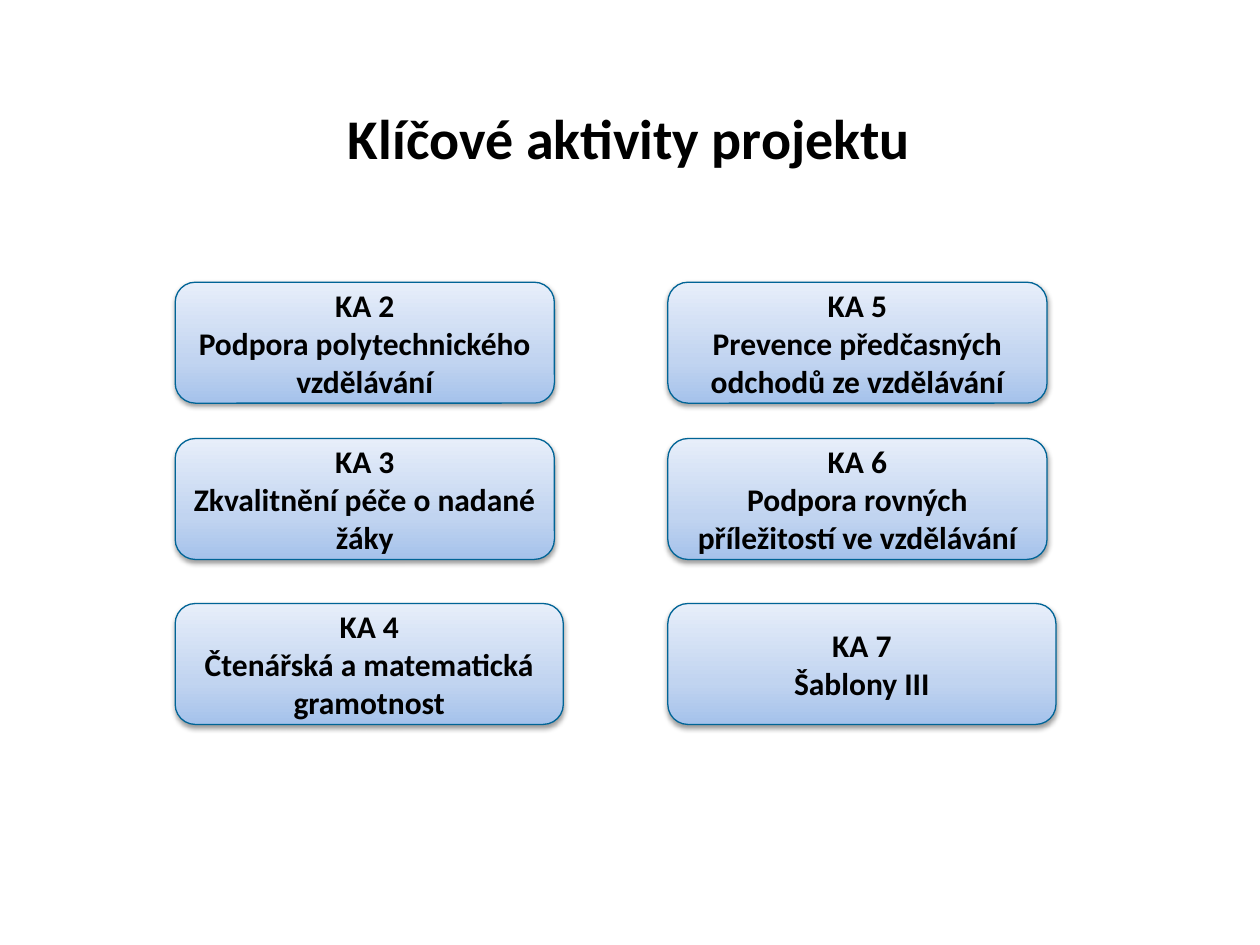
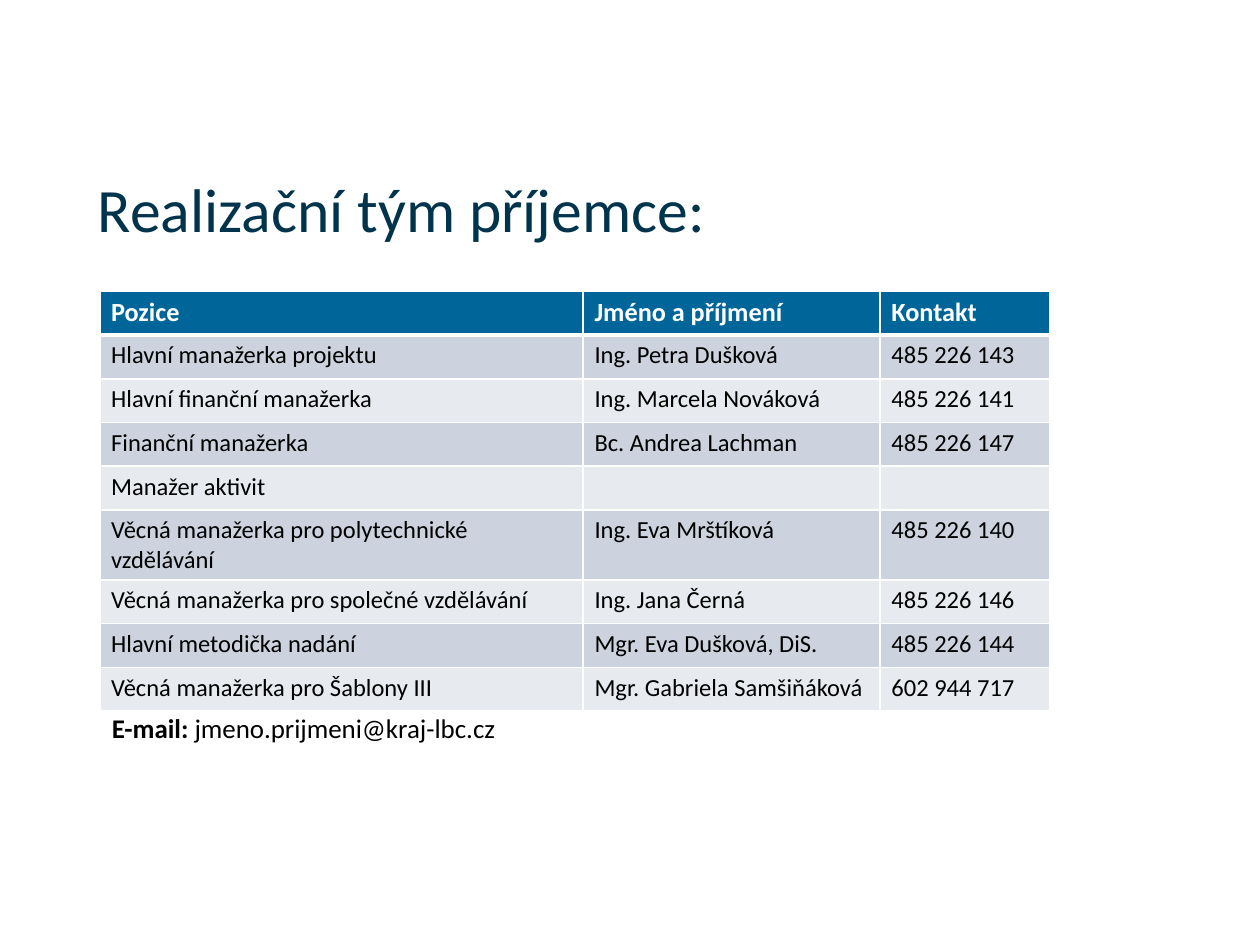
from lxml.etree import SubElement
from pptx import Presentation
from pptx.dml.color import RGBColor
from pptx.enum.shapes import MSO_SHAPE
from pptx.enum.text import MSO_ANCHOR, PP_ALIGN
from pptx.oxml.ns import qn
from pptx.util import Pt

FONT = "Calibri"
BLACK = RGBColor(0x00, 0x00, 0x00)
WHITE = RGBColor(0xFF, 0xFF, 0xFF)
NAVY = RGBColor(0x00, 0x33, 0x4C)
HEADER_BLUE = RGBColor(0x00, 0x66, 0x99)
OUTLINE_BLUE = RGBColor(0x00, 0x64, 0x96)
BAND_DARK = RGBColor(0xCC, 0xD3, 0xDE)
BAND_LIGHT = RGBColor(0xE7, 0xEA, 0xEF)
CARD_STOPS = (
    (0, RGBColor(0xA5, 0xC2, 0xEB)),
    (35, RGBColor(0xC1, 0xD4, 0xF0)),
    (100, RGBColor(0xE7, 0xEE, 0xFA)),
)

CARD_LEFTS = (100.1, 381.6)
CARD_ROWS = ((161.3, 216.7), (250.6, 216.7), (344.9, 221.8))
CARD_HEIGHT = 69.1
ACTIVITIES = (
    (("KA 2", "Podpora polytechnického vzdělávání"),
     ("KA 5", "Prevence předčasných odchodů ze vzdělávání")),
    (("KA 3", "Zkvalitnění péče o nadané žáky"),
     ("KA 6", "Podpora rovných příležitostí ve vzdělávání")),
    (("KA 4", "Čtenářská a matematická gramotnost"),
     ("KA 7", "Šablony III")),
)

TEAM_COLUMNS = (276.25, 169.7, 96.85)
TEAM_ROW_HEIGHT = 25
TEAM = (
    ("Pozice", "Jméno a příjmení", "Kontakt"),
    ("Hlavní manažerka projektu", "Ing. Petra Dušková", "485 226 143"),
    ("Hlavní finanční manažerka", "Ing. Marcela Nováková", "485 226 141"),
    ("Finanční manažerka", "Bc. Andrea Lachman", "485 226 147"),
    ("Manažer aktivit", "", ""),
    ("Věcná manažerka pro polytechnické vzdělávání", "Ing. Eva Mrštíková", "485 226 140"),
    ("Věcná manažerka pro společné vzdělávání", "Ing. Jana Černá", "485 226 146"),
    ("Hlavní metodička nadání", "Mgr. Eva Dušková, DiS.", "485 226 144"),
    ("Věcná manažerka pro Šablony III", "Mgr. Gabriela Samšiňáková", "602 944 717"),
)


def set_font(p, size, color, bold=None):
    """Set the font of a whole paragraph."""
    p.font.name = FONT
    p.font.size = Pt(size)
    p.font.color.rgb = color
    p.font.bold = bold


def add_solid(parent, color):
    """Append a solid fill element."""
    fill = SubElement(parent, qn("a:solidFill"))
    return SubElement(fill, qn("a:srgbClr"), val=str(color))


def add_text(slide, left, top, width, height, runs, size, color):
    """Add a one-paragraph text box from (text, bold) runs."""
    box = slide.shapes.add_textbox(Pt(left), Pt(top), Pt(width), Pt(height))
    tf = box.text_frame
    tf.word_wrap = True
    p = tf.paragraphs[0]
    set_font(p, size, color)
    for text, bold in runs:
        r = p.add_run()
        r.text = text
        r.font.bold = bold
    return tf


def fill_card(s):
    """Give a card its upward gradient."""
    s.fill.gradient()
    s.fill.gradient_angle = 90
    stops = s._element.spPr.find(qn("a:gradFill")).find(qn("a:gsLst"))
    for stop in list(stops):
        stops.remove(stop)
    for percent, color in CARD_STOPS:
        stop = SubElement(stops, qn("a:gs"), pos=str(percent * 1000))
        SubElement(stop, qn("a:srgbClr"), val=str(color))


def add_shadow(s):
    """Give a card a soft shadow below it."""
    s.shadow.inherit = False
    effects = s._element.spPr.find(qn("a:effectLst"))
    shadow = SubElement(effects, qn("a:outerShdw"), blurRad=str(Pt(3.1)),
                        dist=str(Pt(1.6)), dir="5400000", rotWithShape="0")
    color = SubElement(shadow, qn("a:srgbClr"), val=str(BLACK))
    SubElement(color, qn("a:alpha"), val="38000")


def add_card(slide, left, top, width, lines):
    """Add a rounded card with centred bold lines."""
    s = slide.shapes.add_shape(MSO_SHAPE.ROUNDED_RECTANGLE, Pt(left), Pt(top),
                               Pt(width), Pt(CARD_HEIGHT))
    fill_card(s)
    s.line.color.rgb = OUTLINE_BLUE
    s.line.width = Pt(0.75)
    add_shadow(s)
    tf = s.text_frame
    tf.word_wrap = True
    tf.vertical_anchor = MSO_ANCHOR.MIDDLE
    for i, text in enumerate(lines):
        p = tf.add_paragraph() if i else tf.paragraphs[0]
        p.text = text
        p.alignment = PP_ALIGN.CENTER
        set_font(p, 18, BLACK, True)


def format_cell(cell, text, row):
    """Write one team cell with its borders, fill and font."""
    header = row == 0
    widths = {"L": 1, "R": 1, "T": 3 if row == 1 else 1, "B": 3 if header else 1}
    tc_pr = cell._tc.get_or_add_tcPr()
    for side, width in widths.items():
        add_solid(SubElement(tc_pr, qn("a:ln" + side), w=str(Pt(width))), WHITE)
    cell.fill.solid()
    cell.fill.fore_color.rgb = HEADER_BLUE if header else BAND_DARK if row % 2 else BAND_LIGHT
    cell.margin_left = cell.margin_right = Pt(6.5)
    cell.margin_top = cell.margin_bottom = Pt(3.2)
    p = cell.text_frame.paragraphs[0]
    size = 15 if header else 14
    if text:
        p.text = text
    else:
        p._p.get_or_add_endParaRPr().set("sz", str(size * 100))
    set_font(p, size, WHITE if header else BLACK, header)


def add_team_table(slide, left, top):
    """Add the banded table of the team."""
    table = slide.shapes.add_table(len(TEAM), len(TEAM_COLUMNS), Pt(left), Pt(top),
                                   Pt(sum(TEAM_COLUMNS)),
                                   Pt(TEAM_ROW_HEIGHT * len(TEAM))).table
    for column, width in zip(table.columns, TEAM_COLUMNS):
        column.width = Pt(width)
    for i, member in enumerate(TEAM):
        table.rows[i].height = Pt(TEAM_ROW_HEIGHT)
        for j, text in enumerate(member):
            format_cell(table.cell(i, j), text, i)


def build_activities(slide):
    """Build the slide of key activities."""
    tf = add_text(slide, 39.6, 55.4, 640, 46, [("Klíčové aktivity projektu", True)], 32, BLACK)
    tf.paragraphs[0].alignment = PP_ALIGN.CENTER
    for (top, width), activities in zip(CARD_ROWS, ACTIVITIES):
        for left, lines in zip(CARD_LEFTS, activities):
            add_card(slide, left, top, width, lines)


def build_team(slide):
    """Build the slide of the project team."""
    tf = add_text(slide, 49.5, 105, 621.5, 37.5,
                  [("Realizační tým příjemce:", False)], 35.2, NAVY)
    tf.vertical_anchor = MSO_ANCHOR.MIDDLE
    tf.margin_left = tf.margin_right = Pt(6.5)
    tf.margin_top = tf.margin_bottom = Pt(3.2)
    tf.paragraphs[0].line_spacing = 0.7
    add_team_table(slide, 57, 166.5)
    add_text(slide, 56.9, 403.2, 412, 26,
             [("E-mail: ", True), ("jmeno.prijmeni@kraj-lbc.cz", False)], 15.4, BLACK)


def main():
    """Build and save the presentation."""
    prs = Presentation()
    prs.slide_width, prs.slide_height = Pt(720), Pt(540)
    for build in (build_activities, build_team):
        build(prs.slides.add_slide(prs.slide_layouts[6]))
    prs.save("out.pptx")


if __name__ == "__main__":
    main()
